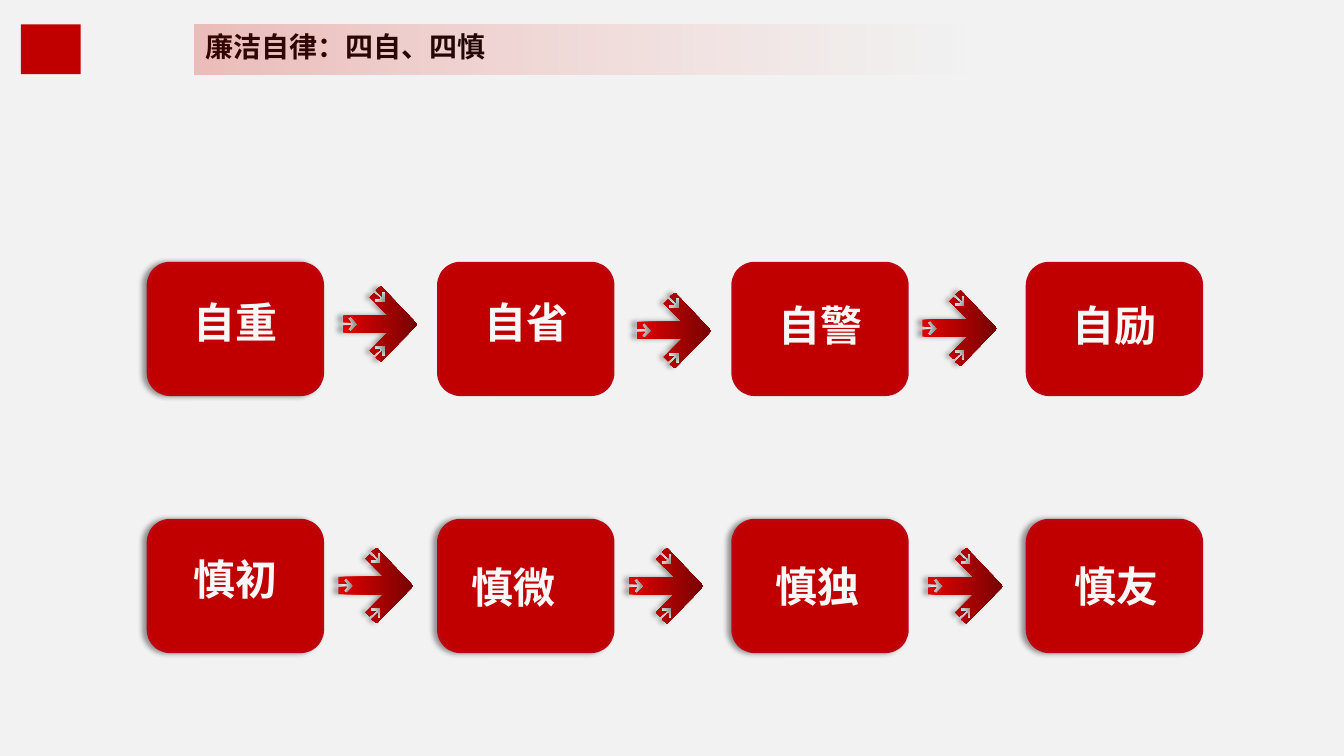
from lxml.etree import SubElement
from pptx import Presentation
from pptx.dml.color import RGBColor
from pptx.enum.lang import MSO_LANGUAGE_ID as Language
from pptx.enum.shapes import MSO_SHAPE as Preset
from pptx.enum.text import MSO_ANCHOR as Anchor, MSO_AUTO_SIZE as AutoSize, PP_ALIGN as Align
from pptx.oxml.ns import qn
from pptx.util import Pt

RED = "C00000"
CARD_WIDTH, CARD_HEIGHT = 124.7, 93.9
CARD_LEFTS = (0, 207.4, 417.6, 627.9)
ARROW_UNIT, ARROW_SPAN = 0.72, 75
ARROW_UPPER = [
    (38, 0), (33, 4), (39, 10), (39, 5), (42, 5), (42, 16), (32, 16), (32, 12), (37, 12),
    (31, 7), (27, 11), (45, 29), (0, 29), (0, 36), (8, 36), (5, 32), (8, 30), (15, 37.5),
]
ROWS = [
    {
        "top": 188,
        "labels": [("自重", -10.8, 20), ("自省", -10.8, 20), ("自警", -10.8, 22.2), ("自励", -10.8, 22.2)],
        "arrows": [(139, 16.4), (349, 21), (553, 19.4)],
        "shadowed": 1,
    },
    {
        "top": 371.6,
        "labels": [("慎初", -10.8, 20), ("慎微", -20.2, 25.6), ("慎独", -13, 25.2), ("慎友", -10, 25.2)],
        "arrows": [(136, 19.6), (343.4, 19.8), (557.2, 19.8)],
        "shadowed": 4,
    },
]


def color(value):
    return RGBColor.from_string(value)


def write(frame, text, size, fill, align=Align.LEFT, spacing=1.0, anchor=Anchor.TOP):
    frame.word_wrap = True
    frame.auto_size = AutoSize.NONE
    frame.vertical_anchor = anchor
    paragraph = frame.paragraphs[0]
    paragraph.alignment = align
    paragraph.line_spacing = spacing
    run = paragraph.add_run()
    run.text = text
    run.font.size = Pt(size)
    run.font.bold = True
    run.font.name = "Arial"
    run.font.language_id = Language.SIMPLIFIED_CHINESE
    run.font.color.rgb = color(fill)
    SubElement(run._r.rPr, qn("a:ea"), typeface="Arial")


def set_gradient(shape, stops, angle):
    shape.fill.gradient()
    shape.fill.gradient_angle = angle
    for stop, (value, opacity) in zip(shape.fill.gradient_stops, stops):
        stop.color.rgb = color(value)
    if any(opacity < 100 for value, opacity in stops):
        for node, (value, opacity) in zip(shape.element.iter(qn("a:gs")), stops):
            SubElement(node[0], qn("a:alpha"), val=str(opacity * 1000))


def add_shadow(shape):
    effects = shape.element.spPr.find(qn("a:effectLst"))
    shadow = SubElement(
        effects, qn("a:outerShdw"), blurRad=str(Pt(4)), dist=str(Pt(3)),
        dir="10800000", algn="r", rotWithShape="0",
    )
    black = SubElement(shadow, qn("a:srgbClr"), val="000000")
    SubElement(black, qn("a:alpha"), val="40000")


def add_block(slide, preset, left, top, width, height):
    shape = slide.shapes.add_shape(preset, Pt(left), Pt(top), Pt(width), Pt(height))
    shape.shadow.inherit = False
    shape.fill.solid()
    shape.fill.fore_color.rgb = color(RED)
    shape.line.fill.background()
    return shape


def draw_header(slide, left, top, height):
    add_block(slide, Preset.RECTANGLE, left, top, 42.6, height)
    band = add_block(slide, Preset.RECTANGLE, left + 123.6, top, 563, height)
    set_gradient(band, [("F05F55", 0), ("D7190F", 25)], 180)
    title = slide.shapes.title
    title.left, title.top = Pt(left + 124.5), Pt(top + 2.8)
    title.width, title.height = Pt(338.4), Pt(39.6)
    write(title.text_frame, "廉洁自律：四自、四慎", 20, "000000", spacing=0.9)


def draw_card(slide, left, top, shadowed):
    card = add_block(slide, Preset.FLOWCHART_ALTERNATE_PROCESS, left, top, CARD_WIDTH, CARD_HEIGHT)
    card.line.color.rgb = color("BD0411")
    card.line.width = Pt(2)
    if shadowed:
        add_shadow(card)


def draw_label(slide, text, left, top):
    label = slide.shapes.add_textbox(Pt(left), Pt(top), Pt(147), Pt(43))
    write(label.text_frame, text, 30, "F8F8F8", align=Align.CENTER)


def draw_arrow(slide, left, top):
    lower = [(x, ARROW_SPAN - y) for x, y in reversed(ARROW_UPPER[:-1])]
    points = ARROW_UPPER + lower + [(74.5, ARROW_SPAN / 2)]
    builder = slide.shapes.build_freeform(*points[0], scale=Pt(ARROW_UNIT))
    builder.add_line_segments(points[1:], close=True)
    arrow = builder.convert_to_shape(Pt(left), Pt(top))
    arrow.shadow.inherit = False
    arrow.line.fill.background()
    set_gradient(arrow, [("E30000", 100), ("760303", 100)], 0)
    add_shadow(arrow)


def draw_row(slide, left, top, labels, arrows, shadowed):
    for index, (card_left, (text, shift, drop)) in enumerate(zip(CARD_LEFTS, labels)):
        draw_card(slide, left + card_left, top, index < shadowed)
        draw_label(slide, text, left + card_left + shift, top + drop)
    for arrow_left, drop in arrows:
        draw_arrow(slide, left + arrow_left, top + drop)


def main():
    presentation = Presentation()
    presentation.slide_width, presentation.slide_height = Pt(960), Pt(540)
    slide = presentation.slides.add_slide(presentation.slide_layouts[5])
    slide.background.fill.solid()
    slide.background.fill.fore_color.rgb = color("F2F2F2")
    draw_header(slide, 15, 17.5, 35.5)
    for row in ROWS:
        draw_row(slide, 105.8, **row)
    presentation.save("out.pptx")


if __name__ == "__main__":
    main()
